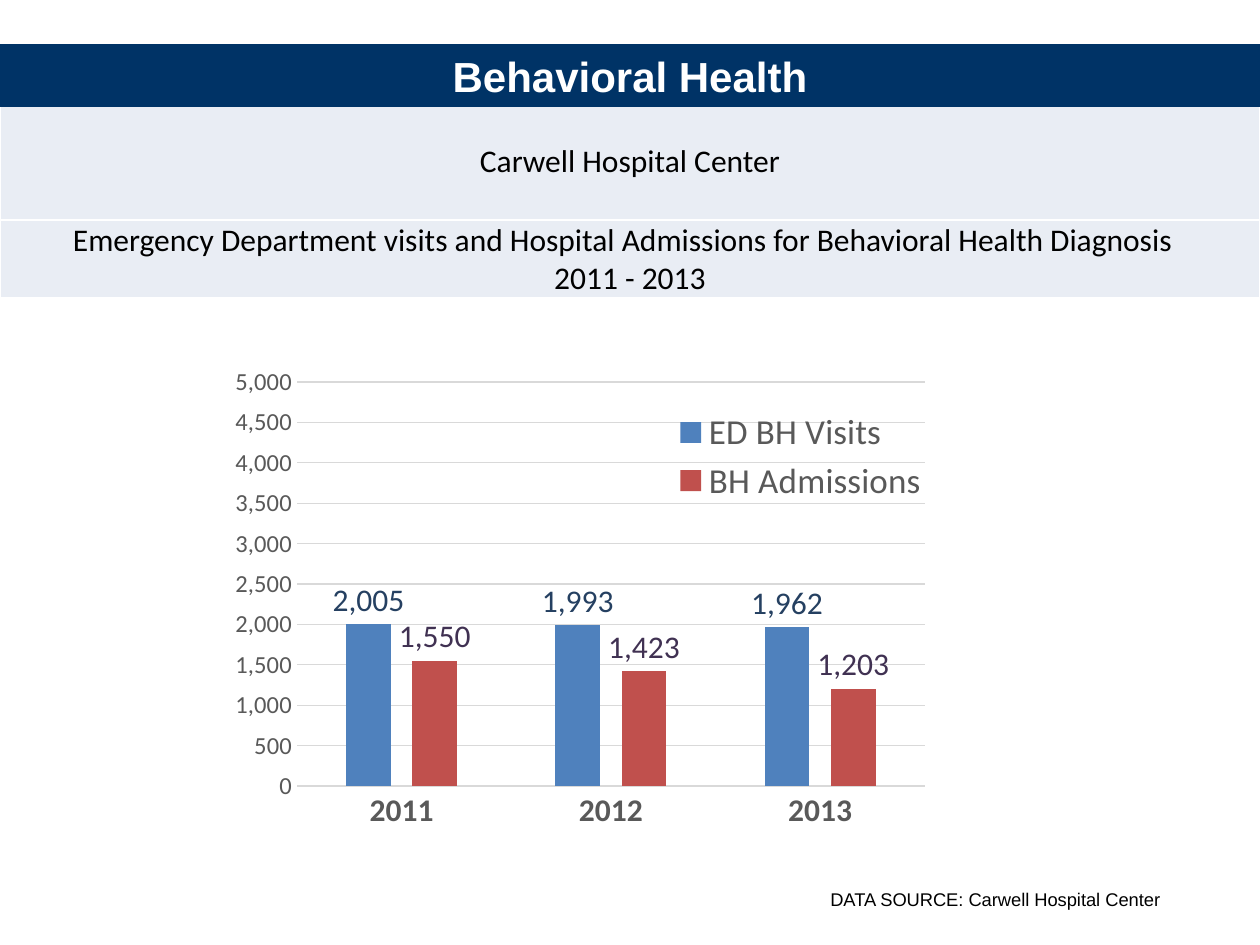
from dataclasses import dataclass

from pptx import Presentation
from pptx.chart.data import CategoryChartData
from pptx.dml.color import RGBColor
from pptx.enum.chart import XL_CHART_TYPE, XL_LABEL_POSITION, XL_LEGEND_POSITION, XL_TICK_MARK
from pptx.enum.text import MSO_ANCHOR, PP_ALIGN
from pptx.oxml import parse_xml
from pptx.oxml.ns import nsdecls, qn
from pptx.util import Emu, Pt

COLUMNS = XL_CHART_TYPE.COLUMN_CLUSTERED
OUTSIDE = XL_LABEL_POSITION.OUTSIDE_END
RIGHT = XL_LEGEND_POSITION.RIGHT
NO_TICK = XL_TICK_MARK.NONE
MIDDLE, TOP = MSO_ANCHOR.MIDDLE, MSO_ANCHOR.TOP
CENTER, LEFT = PP_ALIGN.CENTER, PP_ALIGN.LEFT
PX = 914400 / 126


@dataclass(frozen=True)
class Theme:
    head_font: str = "Arial"
    body_font: str = "Calibri"
    navy: str = "003366"
    white: str = "FFFFFF"
    black: str = "000000"
    band: str = "E9EDF4"
    grey: str = "595959"
    grid: str = "D9D9D9"
    title_size: float = 24
    body_size: float = 18
    axis_size: float = 14
    legend_size: float = 20
    source_size: float = 10.5


T = Theme()
HOSPITAL = "Carwell Hospital Center"
YEARS = ["2011", "2012", "2013"]
# name, values, bar colour, label colour
SERIES = [
    ("ED BH Visits", (2005, 1993, 1962), "4F81BD", "254061"),
    ("BH Admissions", (1550, 1423, 1203), "C0504D", "403152"),
]


def px(n):
    return Emu(round(n * PX))


def rgb(value):
    return RGBColor.from_string(value)


def paint(fill, color):
    fill.solid()
    fill.fore_color.rgb = rgb(color)


def style(font, size, color, name=T.body_font, bold=False):
    font.size, font.name, font.bold = Pt(size), name, bold
    font.color.rgb = rgb(color)


def write(tf, *lines, size=T.body_size, color=T.black, font=T.body_font,
          bold=False, align=LEFT):
    for i, line in enumerate(lines):
        p = tf.add_paragraph() if i else tf.paragraphs[0]
        p.alignment = align
        r = p.add_run()
        r.text = line
        style(r.font, size, color, font, bold)


def place(sp, x, y, w, h):
    sp.left, sp.top, sp.width, sp.height = px(x), px(y), px(w), px(h)


def border_cell(cell, color):
    tc_pr = cell._tc.get_or_add_tcPr()
    for i, side in enumerate(("lnL", "lnR", "lnT", "lnB")):
        tc_pr.insert(i, parse_xml(
            f'<a:{side} {nsdecls("a")} w="12700"><a:solidFill>'
            f'<a:srgbClr val="{color}"/></a:solidFill></a:{side}>'))


def add_headings(s, x, y, w, heights):
    table = s.shapes.add_table(2, 1, px(x), px(y), px(w), px(sum(heights))).table
    rows = [
        (HOSPITAL,),
        ("Emergency Department visits and Hospital Admissions for Behavioral Health Diagnosis  ",
         "2011 - 2013"),
    ]
    for i, lines in enumerate(rows):
        table.rows[i].height = px(heights[i])
        cell = table.cell(i, 0)
        cell.vertical_anchor = MIDDLE
        cell.margin_left = cell.margin_right = cell.margin_top = px(1)
        cell.margin_bottom = 0
        paint(cell.fill, T.band)
        border_cell(cell, T.white)
        write(cell.text_frame, *lines, align=CENTER)


def add_title(s, x, y, w, h):
    sp = s.shapes.title
    place(sp, x, y, w, h)
    paint(sp.fill, T.navy)
    sp.text_frame.vertical_anchor = MIDDLE
    write(sp.text_frame, "Behavioral Health", size=T.title_size, color=T.white,
          font=T.head_font, bold=True, align=CENTER)
    # The title bar overlaps the top of the table, so it goes in front.
    sp.element.getparent().append(sp.element)


def set_layout(parent, index, inner, x, y, w, h):
    """Place a chart part by fractions of the chart's size."""
    for old in parent.findall(qn("c:layout")):
        parent.remove(old)
    target = '<c:layoutTarget val="inner"/>' if inner else ""
    parent.insert(index, parse_xml(
        f'<c:layout {nsdecls("c")}><c:manualLayout>{target}'
        '<c:xMode val="edge"/><c:yMode val="edge"/>'
        f'<c:x val="{x}"/><c:y val="{y}"/><c:w val="{w}"/><c:h val="{h}"/>'
        '</c:manualLayout></c:layout>'))


def format_axes(chart):
    cat, val = chart.category_axis, chart.value_axis
    for axis in (cat, val):
        axis.major_tick_mark = axis.minor_tick_mark = NO_TICK
    style(cat.tick_labels.font, T.body_size, T.grey, bold=True)
    style(val.tick_labels.font, T.axis_size, T.grey)
    val.minimum_scale, val.maximum_scale, val.major_unit = 0, 5000, 500
    val.tick_labels.number_format = "#,##0"
    val.tick_labels.number_format_is_linked = False
    val.format.line.fill.background()
    for line in (cat.format.line, val.major_gridlines.format.line):
        line.width = Pt(0.75)
        line.color.rgb = rgb(T.grid)


def format_series(series, color, label_color):
    paint(series.format.fill, color)
    series.invert_if_negative = False
    labels = series.data_labels
    labels.show_value = True
    labels.position = OUTSIDE
    labels.number_format = "#,##0"
    labels.number_format_is_linked = False
    style(labels.font, T.body_size, label_color)


def add_visits_chart(s, x, y, w, h):
    data = CategoryChartData(number_format="#,##0")
    data.categories = YEARS
    for name, values, *_ in SERIES:
        data.add_series(name, values)
    chart = s.shapes.add_chart(COLUMNS, px(x), px(y), px(w), px(h), data).chart
    chart.has_title = False
    style(chart.font, 10, T.black)
    format_axes(chart)
    plot = chart.plots[0]
    plot.vary_by_categories = False
    plot.gap_width, plot.overlap = 219, -48
    for series, (_, _, color, label_color) in zip(plot.series, SERIES):
        format_series(series, color, label_color)
    chart.has_legend = True
    chart.legend.position = RIGHT
    chart.legend.include_in_layout = True
    style(chart.legend.font, T.legend_size, T.grey)
    root = chart.element
    set_layout(root.find(".//" + qn("c:plotArea")), 0, True, 0.107, 0.05, 0.872, 0.84)
    set_layout(root.find(".//" + qn("c:legend")), 1, False, 0.64, 0.1, 0.35, 0.21)


def add_source(s, x, y, w, h):
    tf = s.shapes.add_textbox(px(x), px(y), px(w), px(h)).text_frame
    tf.word_wrap = True
    tf.vertical_anchor = TOP
    write(tf, f"DATA SOURCE: {HOSPITAL}", size=T.source_size, font=T.head_font)


def main():
    prs = Presentation()
    prs.slide_width, prs.slide_height = px(1260), px(945)
    s = prs.slides.add_slide(prs.slide_layouts[5])
    add_headings(s, 0, 103, 1260, (117, 77))
    add_title(s, 0, 44, 1260, 63)
    add_source(s, 818, 882, 430, 35)
    add_visits_chart(s, 220, 358, 720, 481)
    prs.save("out.pptx")


if __name__ == "__main__":
    main()
